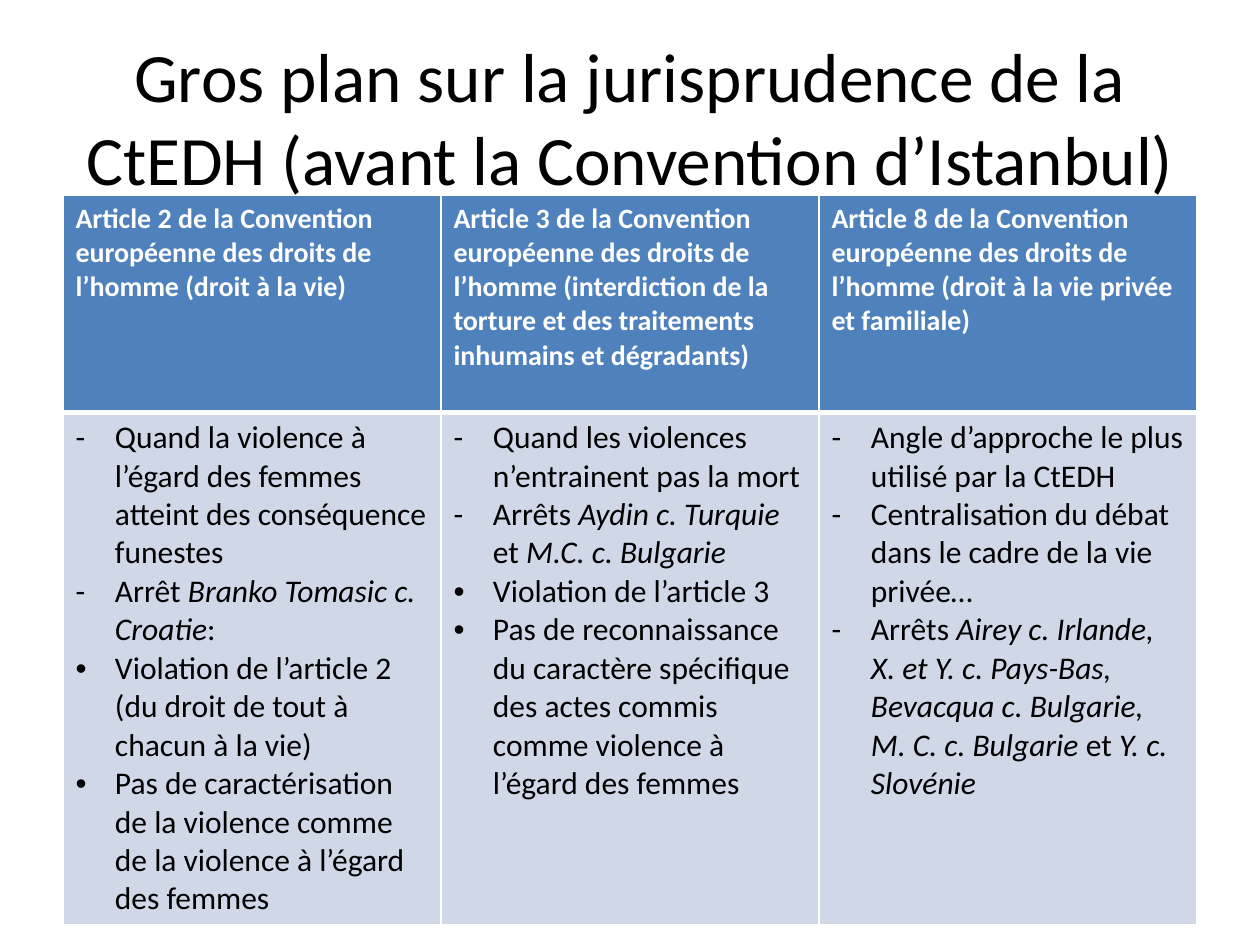
from lxml import etree
from pptx import Presentation
from pptx.dml.color import RGBColor
from pptx.enum.text import MSO_ANCHOR, MSO_AUTO_SIZE, PP_ALIGN
from pptx.oxml.ns import qn
from pptx.util import Pt

MIDDLE, CENTER = MSO_ANCHOR.MIDDLE, PP_ALIGN.CENTER
NO_FIT = MSO_AUTO_SIZE.NONE

THEME = {
    "font": "Calibri", "bullet": "Arial",
    "title": 39.6, "head": 16, "body": 18,
    "dark": "000000", "light": "FFFFFF",
    "head_fill": "4F81BD", "body_fill": "D0D8E8",
}

TITLE = "Gros plan sur la jurisprudence de la CtEDH (avant la Convention d’Istanbul)"

HEADS = [
    "Article 2 de la Convention européenne des droits de l’homme (droit à la vie)",
    "Article 3 de la Convention européenne des droits de l’homme "
    "(interdiction de la torture et des traitements inhumains et dégradants)",
    "Article 8 de la Convention européenne des droits de l’homme "
    "(droit à la vie privée et familiale)",
]

# Each item: bullet, then runs that alternate between upright and italic.
LISTS = [
    [
        ("-", "Quand la violence à l’égard des femmes atteint des conséquence funestes"),
        ("-", "Arrêt ", "Branko Tomasic c. Croatie", ":"),
        ("•", "Violation de l’article 2 (du droit de tout à chacun à la vie)"),
        ("•", "Pas de caractérisation de la violence comme de la violence "
              "à l’égard des femmes"),
    ],
    [
        ("-", "Quand les violences n’entrainent pas la mort"),
        ("-", "Arrêts ", "Aydin c. Turquie ", "et ", "M.C. c. Bulgarie"),
        ("•", "Violation de l’article 3"),
        ("•", "Pas de reconnaissance du caractère spécifique des actes commis "
              "comme violence à l’égard des femmes"),
    ],
    [
        ("-", "Angle d’approche le plus utilisé par la CtEDH"),
        ("-", "Centralisation du débat dans le cadre de la vie privée…"),
        ("-", "Arrêts ", "Airey c. Irlande, X. et Y. c. Pays-Bas, Bevacqua c. Bulgarie, "
              "M. C. c. Bulgarie ", "et ", "Y. c. Slovénie"),
    ],
]

LEFT, WIDTH = 36, 648
TITLE_TOP, TITLE_HEIGHT = 21.6, 90
TABLE_TOP, ROWS = 111.6, (124, 292)
INDENT = 22.5
THIN, THICK = 1, 3


def add_run(para, text, size, color, bold=False, italic=False):
    run = para.add_run()
    run.text = text
    font = run.font
    font.name, font.size = THEME["font"], Pt(size)
    font.bold, font.italic = bold, italic
    font.color.rgb = RGBColor.from_string(THEME[color])


def set_bullet(para, mark):
    props = para._p.get_or_add_pPr()
    props.set("marL", str(Pt(INDENT)))
    props.set("indent", str(-Pt(INDENT)))
    face = THEME["bullet"] if mark == "•" else THEME["font"]
    etree.SubElement(props, qn("a:buFont")).set("typeface", face)
    etree.SubElement(props, qn("a:buChar")).set("char", mark)


def style_cell(cell, fill, top, bottom):
    """Draw the white borders, then the fill, in schema order."""
    props = cell._tc.get_or_add_tcPr()
    for side, width in zip("LRTB", (THIN, THIN, top, bottom)):
        line = etree.SubElement(props, qn("a:ln" + side), w=str(Pt(width)))
        solid = etree.SubElement(line, qn("a:solidFill"))
        etree.SubElement(solid, qn("a:srgbClr")).set("val", THEME["light"])
    cell.fill.solid()
    cell.fill.fore_color.rgb = RGBColor.from_string(THEME[fill])


def add_title(slide):
    title = slide.shapes.title
    title.left, title.top = Pt(LEFT), Pt(TITLE_TOP)
    title.width, title.height = Pt(WIDTH), Pt(TITLE_HEIGHT)
    frame = title.text_frame
    frame.auto_size, frame.vertical_anchor = NO_FIT, MIDDLE
    para = frame.paragraphs[0]
    para.alignment = CENTER
    add_run(para, TITLE, THEME["title"], "dark")


def add_grid(slide):
    table = slide.shapes.add_table(
        len(ROWS), len(HEADS), Pt(LEFT), Pt(TABLE_TOP), Pt(WIDTH), Pt(sum(ROWS))
    ).table
    for row, height in zip(table.rows, ROWS):
        row.height = Pt(height)
    for col, (head, items) in enumerate(zip(HEADS, LISTS)):
        top, body = table.cell(0, col), table.cell(1, col)
        style_cell(top, "head_fill", THIN, THICK)
        style_cell(body, "body_fill", THICK, THIN)
        add_run(top.text_frame.paragraphs[0], head, THEME["head"], "light", bold=True)
        frame = body.text_frame
        for pos, (mark, *parts) in enumerate(items):
            para = frame.add_paragraph() if pos else frame.paragraphs[0]
            set_bullet(para, mark)
            for turn, text in enumerate(parts):
                add_run(para, text, THEME["body"], "dark", italic=turn % 2 == 1)


def main():
    deck = Presentation()
    deck.slide_width, deck.slide_height = Pt(720), Pt(540)
    slide = deck.slides.add_slide(deck.slide_layouts.get_by_name("Title Only"))
    add_title(slide)
    add_grid(slide)
    deck.save("out.pptx")


if __name__ == "__main__":
    main()
